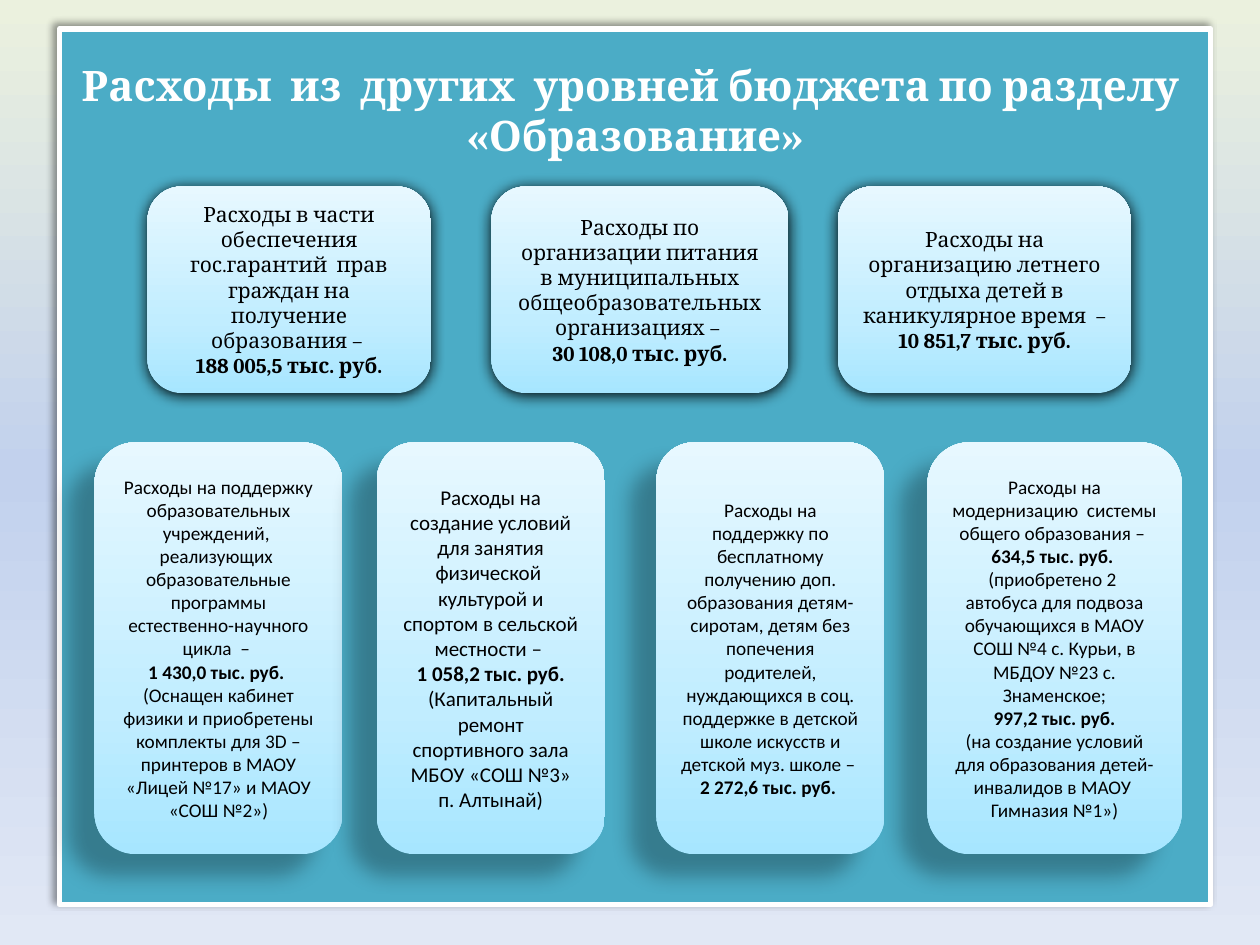
from lxml.etree import SubElement
from pptx import Presentation
from pptx.dml.color import RGBColor
from pptx.enum.shapes import MSO_SHAPE as Shape
from pptx.enum.text import MSO_ANCHOR as Anchor, MSO_AUTO_SIZE as AutoSize, PP_ALIGN as Align
from pptx.oxml.ns import qn
from pptx.util import Inches, Pt

COLORS = {
    "panel": "4BACC6",
    "white": "FFFFFF",
    "black": "000000",
}
BACKGROUND_STOPS = [(0, "EBF1DE"), (50, "C2D1ED"), (100, "E1E8F5")]
CARD_STOPS = [(0, "A7E6FF"), (35, "C1EDFF"), (100, "E7F8FF")]

PANEL_SHADOW = (40, 4, 3, 225)
TOP_SHADOW = (100, 8.5, 1, 90)
BOTTOM_SHADOW = (28, 11.8, 19.7, 141)

TITLE = "Расходы  из  других  уровней бюджета по разделу  «Образование»"

TOP_CARDS = [
    (1.17, 2.25, [
        "Расходы в части обеспечения гос.гарантий  прав граждан на получение образования – ",
        "*188 005,5 тыс. руб.*",
    ]),
    (3.9, 2.36, [
        "Расходы по организации питания в муниципальных общеобразовательных организациях – ",
        "*30 108,0 тыс. руб.*",
    ]),
    (6.65, 2.33, [
        "Расходы на организацию летнего отдыха детей в каникулярное время  – *10 851,7 тыс. руб.*",
    ]),
]

BOTTOM_CARDS = [
    (0.75, 1.97, 11, [
        "Расходы на поддержку образовательных учреждений, ",
        "реализующих  образовательные программы естественно-научного цикла  – ",
        "*1 430,0 тыс. руб. *",
        "(Оснащен кабинет физики и приобретены комплекты для 3D –принтеров "
        "в МАОУ «Лицей №17» и МАОУ «СОШ №2»)",
    ]),
    (2.99, 1.81, 12, [
        "Расходы на создание условий для занятия физической  культурой и спортом "
        "в сельской местности – ",
        "*1 058,2 тыс. руб. *(Капитальный ремонт спортивного зала МБОУ «СОШ №3» п. Алтынай)",
    ]),
    (5.21, 1.81, 11, [
        "Расходы на поддержку по бесплатному получению доп. образования детям-сиротам, "
        "детям без попечения родителей, нуждающихся в соц. поддержке "
        "в детской школе искусств и детской муз. школе – ",
        "*2 272,6 тыс. руб. *",
    ]),
    (7.36, 2.02, 11, [
        "Расходы на модернизацию  системы общего образования – ",
        "*634,5 тыс. руб. *",
        "(приобретено 2  автобуса для подвоза обучающихся в МАОУ СОШ №4 с. Курьи, "
        "в МБДОУ №23 с. Знаменское;",
        "*997,2 тыс. руб.*",
        "(на создание условий для образования детей-инвалидов в МАОУ  Гимназия №1»)",
    ]),
]


class SlideBuilder:
    def __init__(self, presentation):
        self.slide = presentation.slides.add_slide(presentation.slide_layouts[5])

    def background(self):
        self.gradient(self.slide.background.fill, self.slide.element, BACKGROUND_STOPS, 270)

    def gradient(self, fill, element, stops, angle):
        fill.gradient()
        fill.gradient_angle = angle
        stop_list = next(element.iter(qn("a:gsLst")))
        for stop in list(stop_list):
            stop_list.remove(stop)
        for position, color in stops:
            stop = SubElement(stop_list, qn("a:gs"), pos=str(position * 1000))
            SubElement(stop, qn("a:srgbClr"), val=color)

    def shadow(self, shape, opacity, blur, distance, direction):
        shape.shadow.inherit = False
        effects = next(shape.element.iter(qn("a:effectLst")))
        outer = SubElement(
            effects, qn("a:outerShdw"), blurRad=str(Pt(blur)), dist=str(Pt(distance)),
            dir=str(direction * 60000), algn="ctr", rotWithShape="0",
        )
        color = SubElement(outer, qn("a:srgbClr"), val=COLORS["black"])
        SubElement(color, qn("a:alpha"), val=str(opacity * 1000))

    def fill_text(self, frame, paragraphs, font, size, color):
        frame.word_wrap = True
        for index, text in enumerate(paragraphs):
            paragraph = frame.add_paragraph() if index else frame.paragraphs[0]
            paragraph.alignment = Align.CENTER
            paragraph.font.name = font
            paragraph.font.size = Pt(size)
            paragraph.font.color.rgb = RGBColor.from_string(COLORS[color])
            for part, words in enumerate(text.split("*")):
                if words:
                    run = paragraph.add_run()
                    run.text = words
                    run.font.bold = part % 2 == 1

    def title_panel(self, text):
        panel = self.slide.shapes.title
        panel.left, panel.top = Inches(0.47), Inches(0.23)
        panel.width, panel.height = Inches(9.14), Inches(6.95)
        panel.fill.solid()
        panel.fill.fore_color.rgb = RGBColor.from_string(COLORS["panel"])
        panel.line.color.rgb = RGBColor.from_string(COLORS["white"])
        panel.line.width = Pt(3)
        self.shadow(panel, *PANEL_SHADOW)
        frame = panel.text_frame
        frame.auto_size = AutoSize.NONE
        frame.vertical_anchor = Anchor.TOP
        frame.margin_top = Inches(0.24)
        self.fill_text(frame, [f"*{text}*"], "Cambria", 24, "white")

    def card(self, left, top, width, height, paragraphs, font, size, shadow):
        card = self.slide.shapes.add_shape(
            Shape.ROUNDED_RECTANGLE, Inches(left), Inches(top), Inches(width), Inches(height)
        )
        self.gradient(card.fill, card.element, CARD_STOPS, 90)
        card.line.fill.background()
        self.shadow(card, *shadow)
        card.text_frame.vertical_anchor = Anchor.MIDDLE
        self.fill_text(card.text_frame, paragraphs, font, size, "black")


def main():
    presentation = Presentation()
    presentation.slide_width, presentation.slide_height = Inches(10), Inches(7.5)
    builder = SlideBuilder(presentation)
    builder.background()
    builder.title_panel(TITLE)
    for left, width, paragraphs in TOP_CARDS:
        builder.card(left, 1.48, width, 1.64, paragraphs, "Cambria", 12, TOP_SHADOW)
    for left, width, size, paragraphs in BOTTOM_CARDS:
        builder.card(left, 3.51, width, 3.27, paragraphs, "Calibri", size, BOTTOM_SHADOW)
    presentation.save("out.pptx")


if __name__ == "__main__":
    main()
